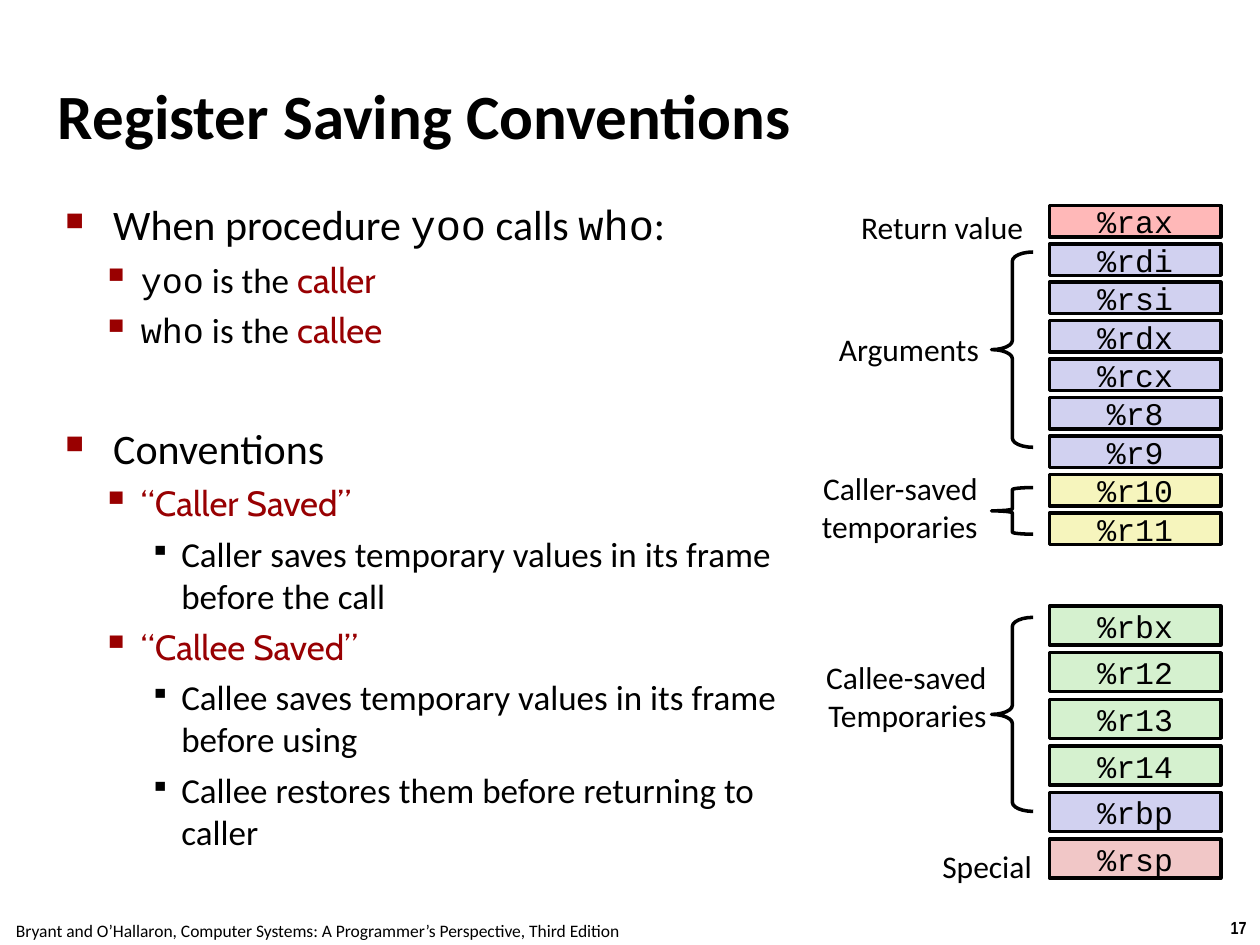
from lxml import etree
from pptx import Presentation
from pptx import util as u
from pptx.dml.color import RGBColor
from pptx.enum import shapes, text
from pptx.oxml.ns import qn

COLORS = {
    "black": "000000", "bullet": "990000", "term": "980002",
    "return": "FFB8B8", "argument": "D1D1F0", "caller": "F6F5BD",
    "callee": "D5F1CF", "special": "F1C7C7",
}
TITLE = "Register Saving Conventions"
# Run styles: font, colour
STYLES = {
    "body": ("Calibri", "black"),
    "code": ("Courier New", "black"),
    "term": ("Cabin", "term"),
}
# Outline levels: size, margin, hanging indent, space before, bullet, its colour, its size %
LEVELS = [
    (24, 0.38, 0.38, 6, "■", "bullet", 60),
    (20, 0.6, 0.31, 5, "▪", "bullet", 110),
    (20, 0.92, 0.25, 5, "▪", "black", 80),
]
SECTION_GAP = 41  # points above the second section
# Level, runs, starts a new section
OUTLINE = [
    (0, [("When procedure ", "body"), ("yoo", "code"), (" calls ", "body"),
         ("who", "code"), (":", "body")], False),
    (1, [("yoo", "code"), (" is the ", "body"), ("caller", "term")], False),
    (1, [("who", "code"), (" is the ", "body"), ("callee", "term")], False),
    (0, [("Conventions", "body")], True),
    (1, [("“Caller Saved”", "term")], False),
    (2, [("Caller saves temporary values in its frame before the call", "body")], False),
    (1, [("“Callee Saved”", "term")], False),
    (2, [("Callee saves temporary values in its frame before using", "body")], False),
    (2, [("Callee restores them before returning to caller", "body")], False),
]
# Register stacks: top, pitch, box height, (register, role)
STACKS = [
    (1.63, 0.305, 0.25, [
        ("%rax", "return"), ("%rdi", "argument"), ("%rsi", "argument"),
        ("%rdx", "argument"), ("%rcx", "argument"), ("%r8", "argument"),
        ("%r9", "argument"), ("%r10", "caller"), ("%r11", "caller")]),
    (4.81, 0.37, 0.31, [
        ("%rbx", "callee"), ("%r12", "callee"), ("%r13", "callee"),
        ("%r14", "callee"), ("%rbp", "argument"), ("%rsp", "special")]),
]
# Group labels: left, top, width, height, lines
LABELS = [
    (6.77, 1.61, 1.39, 0.39, ["Return value"]),
    (6.6, 2.58, 1.21, 0.39, ["Arguments"]),
    (6.41, 3.68, 1.39, 0.69, ["Caller-saved", "temporaries"]),
    (6.49, 5.18, 1.38, 0.69, ["Callee-saved", "Temporaries"]),
    (7.4, 6.68, 0.83, 0.39, ["Special"]),
]
# Braces: top, height, curve
BRACES = [(2, 1.55, 0.22), (3.87, 0.37, 0.05), (4.9, 1.54, 0.22)]
# Footer texts: left, top, width, height, text, font, bold
FOOTERS = [
    (9.66, 7.23, 0.34, 0.27, "17", "Arial Narrow", True),
    (-0.02, 7.25, 5.08, 0.27,
     "Bryant and O’Hallaron, Computer Systems: A Programmer’s Perspective, Third Edition",
     "Calibri", False),
]


def rgb(name):
    return RGBColor.from_string(COLORS[name])


def box(*lengths):
    return [u.Inches(n) for n in lengths]


def set_font(font, name, size=None, color="black", bold=None):
    font.name, font.bold = name, bold
    font.color.rgb = rgb(color)
    if size:
        font.size = u.Pt(size)


def set_margins(tf, inches):
    tf.margin_left = tf.margin_right = tf.margin_top = tf.margin_bottom = u.Inches(inches)


def add_lines(tf, lines, align, name, size, bold=None):
    for i, line in enumerate(lines):
        p = tf.add_paragraph() if i else tf.paragraphs[0]
        p.text, p.alignment = line, align
        set_font(p.font, name, size, bold=bold)


def set_bullet(p, margin, hang, char, color, percent):
    pPr = p._p.get_or_add_pPr()
    pPr.set("marL", str(u.Inches(margin)))
    pPr.set("indent", str(-u.Inches(hang)))
    clr = etree.Element(qn("a:buClr"))
    etree.SubElement(clr, qn("a:srgbClr"), val=COLORS[color])
    size = etree.Element(qn("a:buSzPct"), val=str(percent * 1000))
    bullet = etree.Element(qn("a:buChar"), char=char)
    # Bullet elements come before the default run properties
    at = 0 if pPr.find(qn("a:spcBef")) is None else 1
    pPr[at:at] = [clr, size, bullet]


def add_preset(s, kind, place):
    sp = s.shapes.add_shape(kind, *box(*place))
    sp.shadow.inherit = False
    sp.line.color.rgb = rgb("black")
    sp.line.width = u.Pt(2)
    return sp


def main():
    prs = Presentation()
    prs.slide_width, prs.slide_height = box(10, 7.5)
    s = prs.slides.add_slide(prs.slide_layouts[5])

    # Title
    title = s.shapes.title
    title.left, title.top, title.width, title.height = box(0.42, 0.28, 9.17, 1.25)
    tf = title.text_frame
    set_margins(tf, 0.04)
    tf.vertical_anchor = text.MSO_ANCHOR.MIDDLE
    add_lines(tf, [TITLE], text.PP_ALIGN.LEFT, "Calibri", 36, True)

    # Footer
    for *place, words, name, bold in FOOTERS:
        tf = s.shapes.add_textbox(*box(*place)).text_frame
        tf.word_wrap = False
        add_lines(tf, [words], text.PP_ALIGN.CENTER, name, 10, bold)

    # Outline
    tf = s.shapes.add_textbox(*box(0.42, 1.53, 6.12, 5.94)).text_frame
    tf.word_wrap = True
    for i, (level, runs, new_section) in enumerate(OUTLINE):
        size, margin, hang, before, char, color, percent = LEVELS[level]
        p = tf.add_paragraph() if i else tf.paragraphs[0]
        p.level = level
        p.space_before = u.Pt(SECTION_GAP if new_section else before)
        p.font.size = u.Pt(size)
        set_bullet(p, margin, hang, char, color, percent)
        for words, style in runs:
            r = p.add_run()
            r.text = words
            name, run_color = STYLES[style]
            set_font(r.font, name, size, run_color)

    # Register boxes
    for top, pitch, height, registers in STACKS:
        for i, (register, role) in enumerate(registers):
            sp = add_preset(s, shapes.MSO_SHAPE.RECTANGLE,
                            (8.33, top + i * pitch, 1.36, height))
            sp.fill.solid()
            sp.fill.fore_color.rgb = rgb(role)
            tf = sp.text_frame
            set_margins(tf, 0)
            tf.vertical_anchor = text.MSO_ANCHOR.MIDDLE
            add_lines(tf, [register], text.PP_ALIGN.CENTER, "Courier New", 18)

    # Braces
    for top, height, curve in BRACES:
        brace = add_preset(s, shapes.MSO_SHAPE.LEFT_BRACE, (7.87, top, 0.33, height))
        brace.fill.background()
        brace.adjustments[0] = curve

    # Group labels
    for *place, lines in LABELS:
        tf = s.shapes.add_textbox(*box(*place)).text_frame
        tf.word_wrap = False
        set_margins(tf, 0.04)
        add_lines(tf, lines, text.PP_ALIGN.RIGHT, "Calibri", 18)

    prs.save("out.pptx")


if __name__ == "__main__":
    main()
